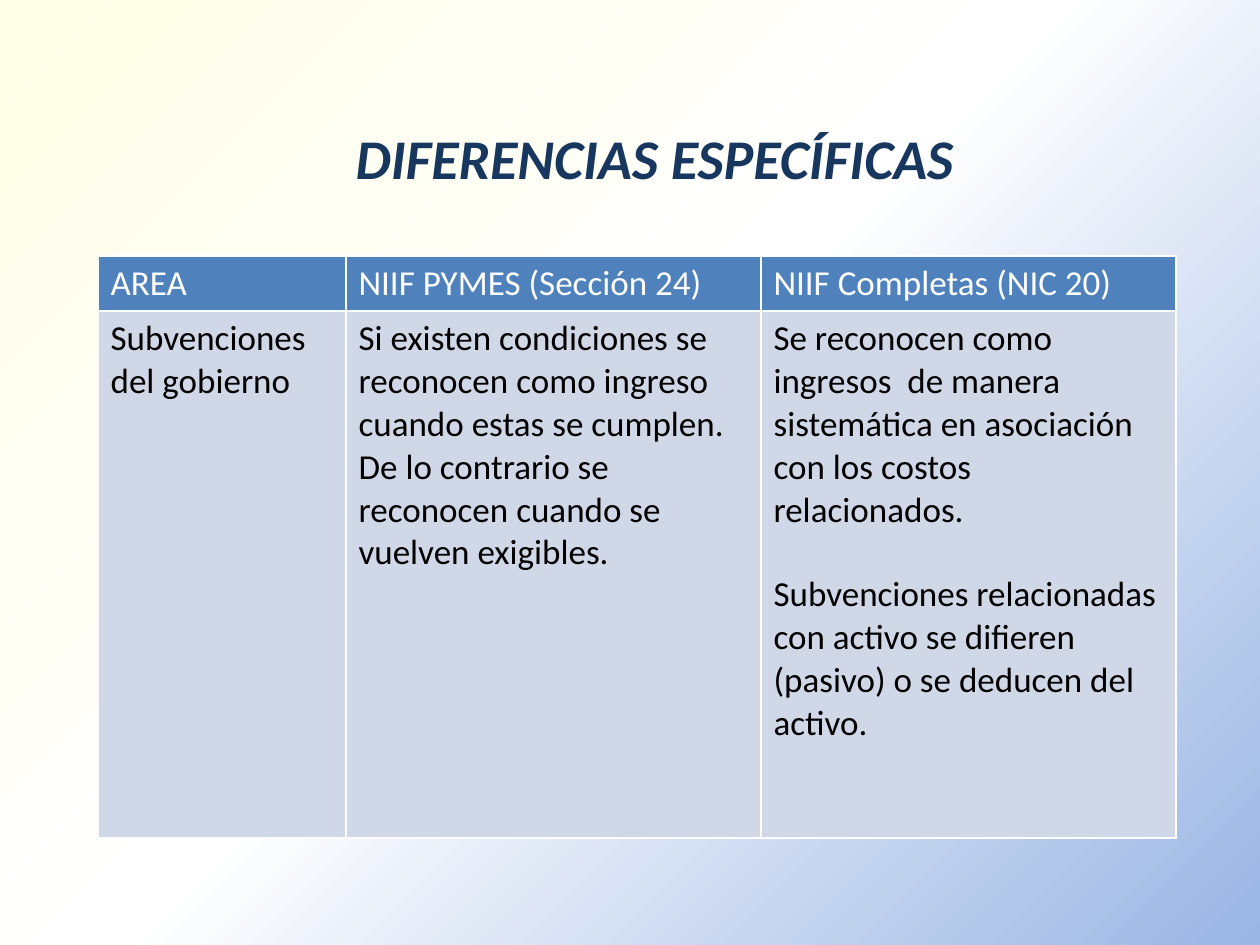
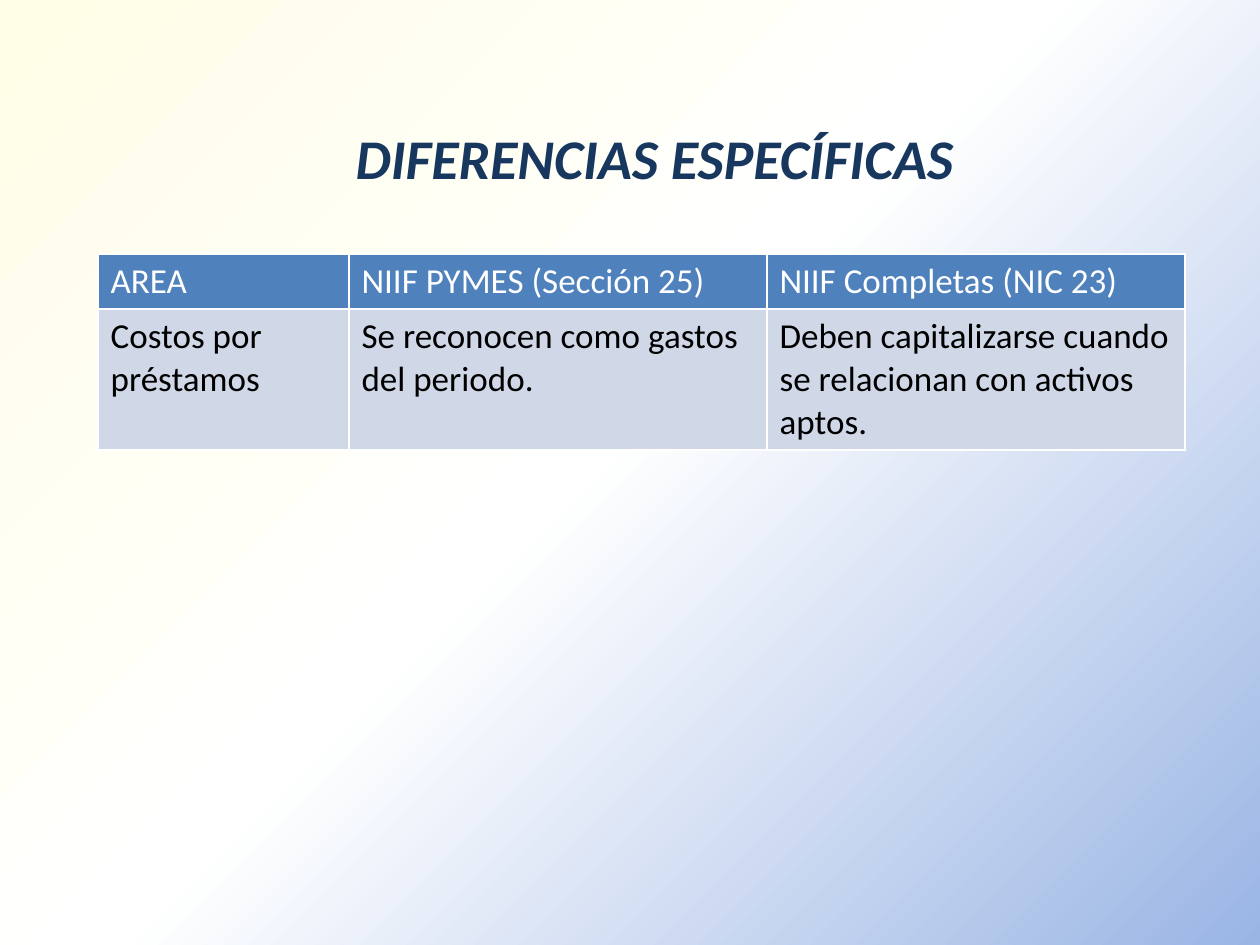
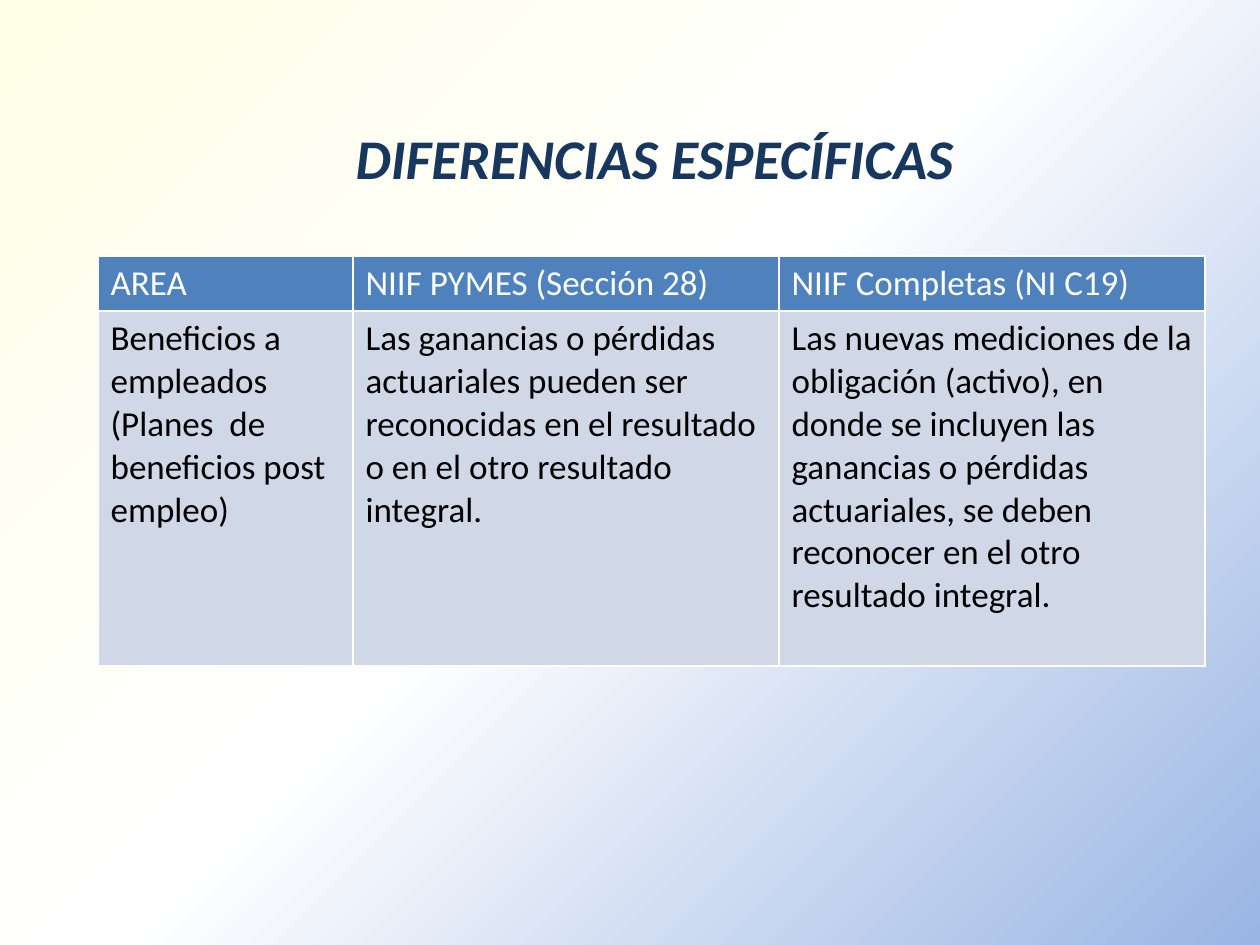
from lxml import etree
from pptx import Presentation
from pptx.dml.color import RGBColor
from pptx.enum.text import MSO_ANCHOR as Anchor, PP_ALIGN as Align
from pptx.oxml import parse_xml
from pptx.oxml.ns import nsdecls, qn
from pptx.util import Emu, Pt

PX = 914400 // 126
FONT = "Calibri"
COLORS = {
    "title": "17375E",
    "header": "4F81BD",
    "header_text": "FFFFFF",
    "body": "D0D8E8",
    "body_text": "000000",
    "border": "FFFFFF",
}
BACKGROUND_STOPS = [(1, "FFFEE7"), (48, "FFFFFF"), (100, "9AB5E4")]
TITLE = "DIFERENCIAS ESPECÍFICAS"
TITLE_BOX = (194, 98, 922, 118)
TABLE_LEFT = 98
HEADER_HEIGHT = 55

COMPARISONS = [
    {
        "top": 256, "columns": (248, 415, 415), "body_height": 527,
        "header": ["AREA", "NIIF PYMES (Sección 24)", "NIIF Completas (NIC 20)"],
        "body": [
            ["Subvenciones del gobierno"],
            ["Si existen condiciones se reconocen como ingreso cuando estas se cumplen. "
             "De lo contrario se reconocen cuando se vuelven exigibles."],
            ["Se reconocen como ingresos  de manera sistemática en asociación "
             "con los costos relacionados.",
             "Subvenciones relacionadas con activo se difieren (pasivo) "
             "o se deducen del activo."],
        ],
    },
    {
        "top": 254, "columns": (251, 418, 418), "body_height": 141,
        "header": ["AREA", "NIIF PYMES (Sección 25)", "NIIF Completas (NIC 23)"],
        "body": [
            ["Costos por préstamos"],
            ["Se reconocen como gastos del periodo."],
            ["Deben capitalizarse cuando se relacionan con activos aptos."],
        ],
    },
    {
        "top": 256, "columns": (255, 426, 426), "body_height": 355,
        "header": ["AREA", "NIIF PYMES (Sección 28)", "NIIF Completas (NI C19)"],
        "body": [
            ["Beneficios a empleados (Planes  de beneficios post empleo)"],
            ["Las ganancias o pérdidas actuariales pueden ser reconocidas "
             "en el resultado o en el otro resultado integral."],
            ["Las nuevas mediciones de la obligación (activo), en donde se incluyen "
             "las ganancias o pérdidas actuariales, se deben reconocer "
             "en el otro resultado integral."],
        ],
    },
]


def px(length):
    return Emu(length * PX)


def set_background(master):
    """Give every slide the diagonal gradient through the master."""
    fill = master.background.fill
    fill.gradient()
    fill.gradient_angle = 315
    stops = master.element.find(".//" + qn("a:gsLst"))
    for stop in list(stops):
        stops.remove(stop)
    for position, color in BACKGROUND_STOPS:
        stop = etree.SubElement(stops, qn("a:gs"), pos=str(position * 1000))
        etree.SubElement(stop, qn("a:srgbClr"), val=color)


def add_span(para, text, size, color, bold=False, italic=False):
    span = para.add_run()
    span.text = text
    font = span.font
    font.name, font.size = FONT, Pt(size)
    font.bold, font.italic = bold, italic
    font.color.rgb = RGBColor.from_string(COLORS[color])


def add_title(page, box):
    frame = page.shapes.add_textbox(*map(px, box)).text_frame
    frame.word_wrap = True
    frame.vertical_anchor = Anchor.MIDDLE
    para = frame.paragraphs[0]
    para.alignment = Align.CENTER
    add_span(para, TITLE, 32, "title", bold=True, italic=True)


def add_borders(cell):
    properties = cell._tc.get_or_add_tcPr()
    for index, side in enumerate("LRTB"):
        properties.insert(index, parse_xml(
            f'<a:ln{side} {nsdecls("a")} w="12700"><a:solidFill>'
            f'<a:srgbClr val="{COLORS["border"]}"/></a:solidFill></a:ln{side}>'))


def fill_cell(cell, texts, kind):
    cell.fill.solid()
    cell.fill.fore_color.rgb = RGBColor.from_string(COLORS[kind])
    add_borders(cell)
    frame = cell.text_frame
    for index, text in enumerate(texts):
        para = frame.add_paragraph() if index else frame.paragraphs[0]
        if index:
            para.space_before = Pt(24)
        add_span(para, text, 20, kind + "_text")


def add_comparison_table(page, left, comparison):
    widths = comparison["columns"]
    heights = (HEADER_HEIGHT, comparison["body_height"])
    box = (left, comparison["top"], sum(widths), sum(heights))
    table = page.shapes.add_table(len(heights), len(widths), *map(px, box)).table
    table.first_row = table.horz_banding = False
    for row, height in zip(table.rows, heights):
        row.height = px(height)
    for index, width in enumerate(widths):
        table.columns[index].width = px(width)
        fill_cell(table.cell(0, index), [comparison["header"][index]], "header")
        fill_cell(table.cell(1, index), comparison["body"][index], "body")


def main():
    deck = Presentation()
    deck.slide_width, deck.slide_height = px(1260), px(945)
    set_background(deck.slide_master)
    for comparison in COMPARISONS:
        page = deck.slides.add_slide(deck.slide_layouts[6])
        add_title(page, TITLE_BOX)
        add_comparison_table(page, TABLE_LEFT, comparison)
    deck.save("out.pptx")


if __name__ == "__main__":
    main()
